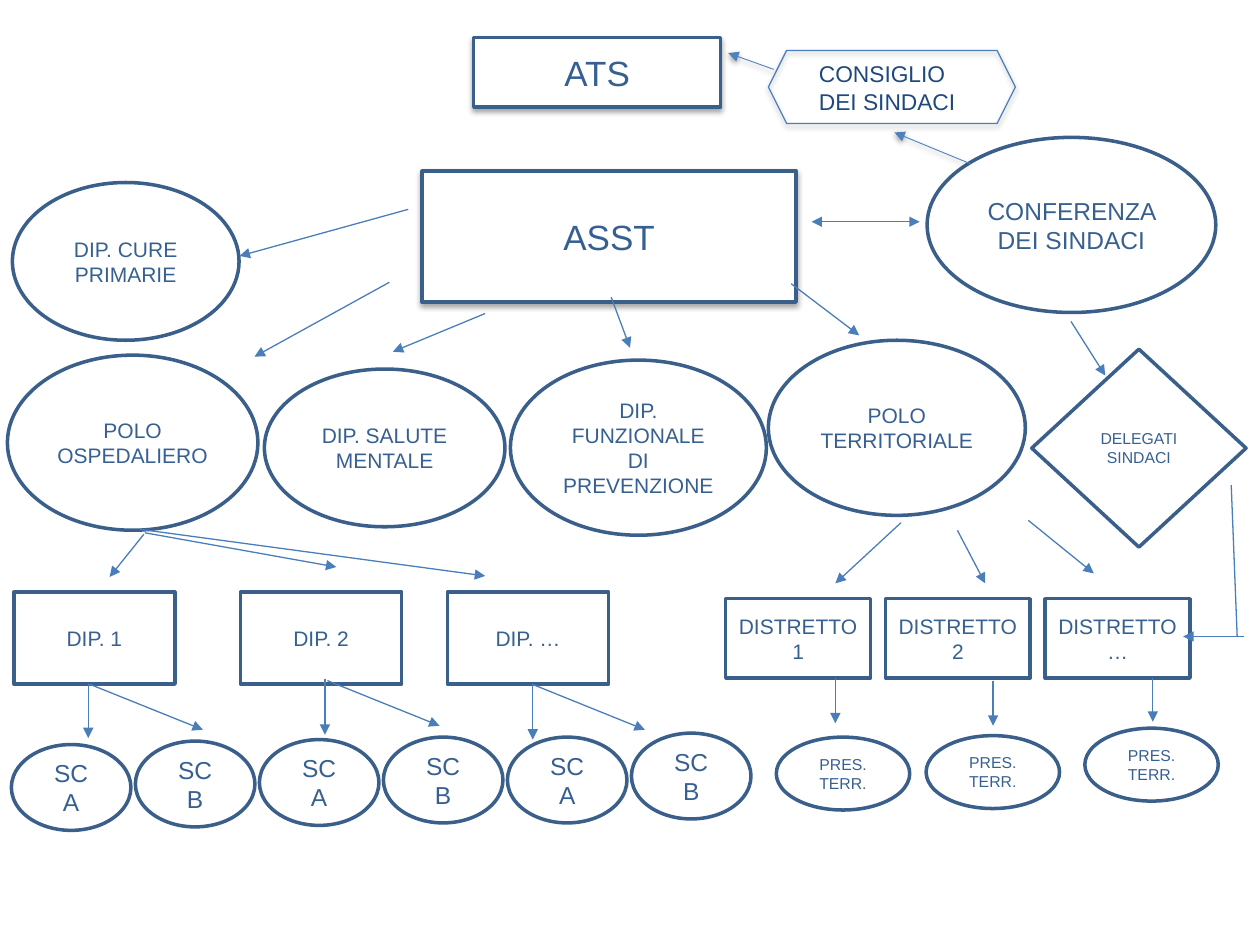
"""Build the organisation chart of a local health agency."""
from lxml.etree import SubElement
from pptx import Presentation
from pptx.dml.color import RGBColor
from pptx.enum.shapes import MSO_CONNECTOR, MSO_SHAPE
from pptx.enum.text import MSO_ANCHOR, MSO_AUTO_SIZE, PP_ALIGN
from pptx.oxml.ns import qn
from pptx.util import Cm, Pt


def paint(color, tone):
    color.rgb = RGBColor.from_string(tone)


def cast(props, dist, alpha):
    glow = props.find(qn("a:effectLst"))
    shade = SubElement(glow, qn("a:outerShdw"), blurRad="40000", dist=dist,
                       dir="5400000", rotWithShape="0")
    black = SubElement(shade, qn("a:srgbClr"), val="000000")
    SubElement(black, qn("a:alpha"), val=alpha)


RECT, OVAL = MSO_SHAPE.RECTANGLE, MSO_SHAPE.OVAL

deck = Presentation()
deck.slide_width, deck.slide_height = Cm(25.4), Cm(19.05)
slide = deck.slides.add_slide(deck.slide_layouts[6])

nodes = [
    (RECT, 8.51, 3.45, 7.54, 2.64, "ASST", 20),
    (RECT, 9.55, 0.76, 4.98, 1.4, "ATS", 20),
    (OVAL, 18.69, 2.77, 5.82, 3.53, "CONFERENZA DEI SINDACI", 14),
    (OVAL, 0.25, 3.68, 4.57, 3.18, "DIP. CURE PRIMARIE", 12),
    (OVAL, 0.15, 7.16, 5.05, 3.53, "POLO OSPEDALIERO", 12),
    (OVAL, 5.33, 7.44, 4.85, 3.18, "DIP. SALUTE MENTALE", 12),
    (OVAL, 10.29, 7.26, 5.16, 3.53, "DIP. FUNZIONALE DI PREVENZIONE", 12),
    (OVAL, 15.49, 6.86, 5.18, 3.53, "POLO TERRITORIALE", 12),
    (MSO_SHAPE.DIAMOND, 20.8, 7.04, 4.32, 3.99, "DELEGATI\nSINDACI", 9),
]
for left, mark in zip((0.28, 4.85, 9.02), "12…"):
    nodes.append((RECT, left, 11.94, 3.25, 1.85, f"DIP. {mark}", 12))
for i, top in enumerate((15.01, 14.94, 14.91, 14.86, 14.86, 14.78)):
    nodes.append((OVAL, 0.23 + 2.5 * i, top, 2.41, 1.73, f"SC\n{'AB'[i % 2]}", 14))
for i, mark in enumerate("12…"):
    nodes.append((RECT, 14.63 + 3.22 * i, 12.07, 2.92, 1.6, f"DISTRETTO\n{mark}", 12))
for left, top in ((15.65, 14.86), (18.67, 14.83), (21.87, 14.68)):
    nodes.append((OVAL, left, top, 2.69, 1.47, "PRES. TERR.", 9))

for kind, left, top, width, height, label, size in nodes:
    node = slide.shapes.add_shape(kind, Cm(left), Cm(top), Cm(width), Cm(height))
    node.fill.solid()
    paint(node.fill.fore_color, "FFFFFF")
    paint(node.line.color, "3A5F8B")
    node.line.width = Pt(2)
    node.shadow.inherit = False
    if size == 20:
        cast(node.element.spPr, "23000", "35000")
    frame = node.text_frame
    frame.text = label
    frame.vertical_anchor = MSO_ANCHOR.MIDDLE
    for line in frame.paragraphs:
        line.alignment = PP_ALIGN.CENTER
        line.font.name, line.font.size = "Arial", Pt(size)
        paint(line.font.color, "376092")

board = slide.shapes.add_shape(MSO_SHAPE.HEXAGON, Cm(15.49), Cm(1.02), Cm(4.98), Cm(1.47))
board.fill.background()
paint(board.line.color, "4B7EBC")
board.line.width = Pt(0.75)
board.shadow.inherit = False
cast(board.element.spPr, "23000", "35000")

title = slide.shapes.add_textbox(Cm(16.26), Cm(1.09), Cm(3.53), Cm(1.37))
frame = title.text_frame
frame.word_wrap = True
frame.auto_size = MSO_AUTO_SIZE.SHAPE_TO_FIT_TEXT
frame.text = "CONSIGLIO DEI SINDACI"
font = frame.paragraphs[0].font
font.name, font.size = "Arial", Pt(13)
paint(font.color, "1F497D")

plain = [(24.82, 9.78, 24.94, 12.83)]
double = [(16.36, 4.47, 18.54, 4.47)]
shaded = [(19.56, 3.3, 18.03, 2.67), (15.6, 1.4, 14.68, 1.07)]
single = [
    (8.23, 4.22, 4.83, 5.16),
    (7.85, 5.69, 5.13, 7.19),
    (9.78, 6.32, 7.92, 7.09),
    (12.32, 5.99, 12.7, 7.01),
    (15.95, 5.72, 17.32, 6.76),
    (21.59, 6.48, 22.28, 7.57),
    (2.9, 10.77, 2.21, 11.63),
    (2.92, 10.74, 6.78, 11.43),
    (2.82, 10.67, 9.78, 11.61),
    (18.16, 10.54, 16.84, 11.76),
    (19.3, 10.69, 19.86, 11.76),
    (20.73, 10.49, 22.05, 11.56),
    (1.78, 13.79, 1.78, 14.88),
    (1.8, 13.79, 4.09, 14.71),
    (6.55, 13.69, 6.55, 14.81),
    (6.6, 13.72, 8.86, 14.63),
    (10.74, 13.79, 10.74, 14.91),
    (10.72, 13.79, 13, 14.71),
    (16.84, 13.67, 16.84, 14.58),
    (20.02, 13.72, 20.02, 14.63),
    (23.24, 13.67, 23.24, 14.55),
    (25.07, 12.83, 23.85, 12.83),
]
groups = [
    (single, "4A7EBB", 0.75, ["tailEnd"]),
    (double, "4A7EBB", 0.75, ["headEnd", "tailEnd"]),
    (plain, "4A7EBB", 0.75, []),
    (shaded, "4F81BD", 0.5, ["tailEnd"]),
]
for links, tone, width, ends in groups:
    for link in links:
        arrow = slide.shapes.add_connector(MSO_CONNECTOR.STRAIGHT, *map(Cm, link))
        paint(arrow.line.color, tone)
        arrow.line.width = Pt(width)
        props = arrow.element.spPr
        for end in ends:
            SubElement(props.find(qn("a:ln")), qn(f"a:{end}"), type="triangle")
        SubElement(props, qn("a:effectLst"))
        if links is shaded:
            cast(props, "20000", "38000")

deck.save("out.pptx")
